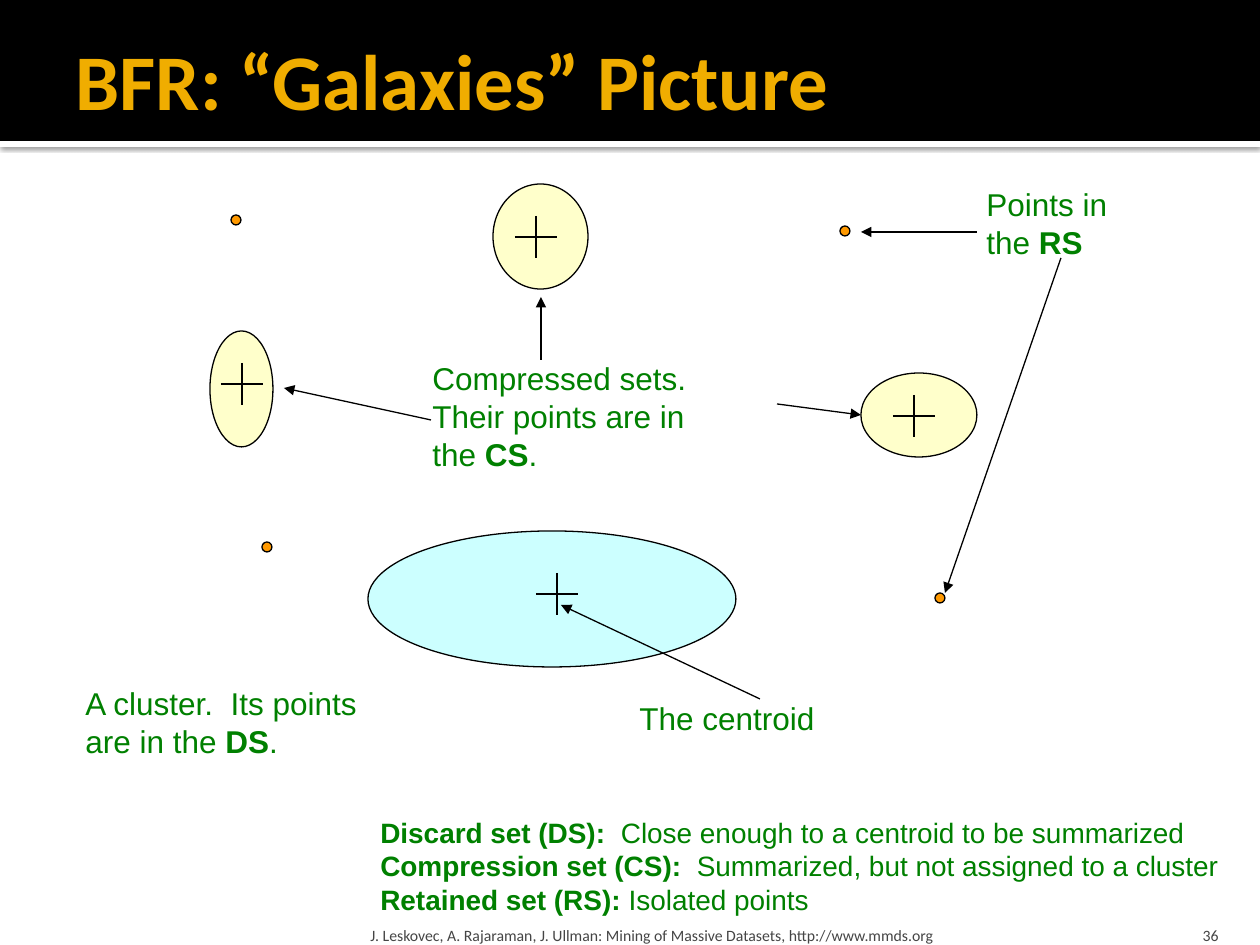
from lxml.etree import SubElement
from pptx import Presentation
from pptx.dml.color import RGBColor
from pptx.enum.shapes import MSO_CONNECTOR, MSO_SHAPE
from pptx.enum.text import MSO_ANCHOR, MSO_AUTO_SIZE, PP_ALIGN
from pptx.oxml.ns import qn
from pptx.util import Pt

PX = 914400 // 126
COLORS = {
    "black": "000000", "white": "FFFFFF", "gold": "F0AD00",
    "gray": "454545", "green": "008000", "cyan": "CCFFFF",
    "yellow": "FFFF99", "orange": "FF9900",
}


def color(name):
    return RGBColor.from_string(COLORS[name])


def scale(*sizes):
    return [size * PX for size in sizes]


def shape(slide, kind, box, fill, line="black", alpha=None):
    item = slide.shapes.add_shape(kind, *scale(*box))
    item.shadow.inherit = False
    item.fill.solid()
    item.fill.fore_color.rgb = color(fill)
    if alpha:
        tint = item.element.spPr.find(".//" + qn("a:srgbClr"))
        SubElement(tint, qn("a:alpha"), val=str(alpha * 1000))
    if line:
        item.line.color.rgb = color(line)
        item.line.width = Pt(0.75)
    else:
        item.line.fill.background()
    return item


def oval(slide, box, fill, alpha=None):
    return shape(slide, MSO_SHAPE.OVAL, box, fill, alpha=alpha)


def line(slide, x1, y1, x2, y2, arrow=False):
    item = slide.shapes.add_connector(
        MSO_CONNECTOR.STRAIGHT, *scale(x1, y1, x2, y2))
    item.line.color.rgb = color("black")
    item.line.width = Pt(0.75)
    if arrow:
        SubElement(item.line._get_or_add_ln(), qn("a:tailEnd"),
                   type="triangle")
    SubElement(item.element.spPr, qn("a:effectLst"))


def cross(slide, x, y, half=21):
    line(slide, x, y - half, x, y + half)
    line(slide, x - half, y, x + half, y)


def label(slide, box, text, size=18, wrap=False):
    """Add green text in which asterisks enclose bold words."""
    frame = slide.shapes.add_textbox(*scale(*box)).text_frame
    frame.word_wrap = wrap
    frame.text = text.replace("*", "")
    for part, row in zip(frame.paragraphs, text.split("\n")):
        part.clear()
        for i, words in enumerate(row.split("*")):
            if words:
                run = part.add_run()
                run.text = words
                style(run.font, "Arial", size, "green", i % 2 == 1)


def style(font, name, size, tone, bold=False):
    font.name = name
    font.size = Pt(size)
    font.color.rgb = color(tone)
    font.bold = bold


def header(slide, x, y, w, h):
    rule = shape(slide, MSO_SHAPE.RECTANGLE, (x, y + h, w, 6), "white", None)
    glow = SubElement(rule.element.spPr.find(qn("a:effectLst")),
                      qn("a:outerShdw"), blurRad=str(Pt(2.5)),
                      dist=str(Pt(0.8)), dir="5400000", rotWithShape="0")
    tint = SubElement(glow, qn("a:srgbClr"), val=COLORS["black"])
    SubElement(tint, qn("a:alpha"), val="60000")
    shape(slide, MSO_SHAPE.RECTANGLE, (x, y, w, h), "black", None)

    title = slide.shapes.title
    slide.shapes.element.append(title.element)
    title.left, title.top, title.width, title.height = scale(
        x + 63, y + 21, w - 126, 116)
    frame = title.text_frame
    frame.text = "BFR: “Galaxies” Picture"
    frame.auto_size = MSO_AUTO_SIZE.NONE
    frame.vertical_anchor = MSO_ANCHOR.MIDDLE
    frame.margin_right = Pt(3.6)
    part = frame.paragraphs[0]
    part.alignment = PP_ALIGN.LEFT
    style(part.runs[0].font, "Calibri", 45, "gold", True)


def footer(slide, x, y, h):
    credit = ("J. Leskovec, A. Rajaraman, J. Ullman: "
              "Mining of Massive Datasets, http://www.mmds.org")
    for left, w, text, side, gap in (
            (x, 759, credit, PP_ALIGN.LEFT, 3.6),
            (x + 766, 101, "36", PP_ALIGN.RIGHT, 7.2)):
        frame = slide.shapes.add_textbox(*scale(left, y, w, h)).text_frame
        frame.word_wrap = True
        frame.vertical_anchor = MSO_ANCHOR.BOTTOM
        frame.margin_left = frame.margin_right = Pt(gap)
        frame.margin_bottom = 0
        frame.text = text
        part = frame.paragraphs[0]
        part.alignment = side
        style(part.runs[0].font, "Calibri", 9, "gray")


def discard(slide, x, y):
    oval(slide, (x + 295, y, 368, 136), "cyan")
    label(slide, (x, y + 147, 300, 89),
          "A cluster.  Its points\nare in the *DS*.")
    cross(slide, x + 484, y + 63)
    label(slide, (x + 554, y + 162, 202, 50), "The centroid")
    line(slide, x + 687, y + 168, x + 488, y + 74, True)


def compress(slide, x, y):
    for dx, dy, w, h in ((0, 147, 63, 116), (651, 189, 116, 84),
                         (283, 0, 95, 105)):
        oval(slide, (x + dx, y + dy, w, h), "yellow", 50)
    for dx, dy in ((32, 200), (704, 232), (326, 53)):
        cross(slide, x + dx, y + dy)
    label(slide, (x + 210, y + 169, 282, 127),
          "Compressed sets.\nTheir points are in\nthe *CS*.")
    for x1, y1, x2, y2 in ((221, 236, 74, 204), (331, 176, 331, 113),
                           (567, 220, 651, 231)):
        line(slide, x + x1, y + y1, x + x2, y + y2, True)


def retain(slide, x, y):
    for dx, dy in ((0, 36), (31, 363), (704, 414), (609, 47)):
        oval(slide, (x + dx, y + dy, 10, 10), "orange")
    label(slide, (x + 743, y, 147, 89), "Points in\nthe *RS*")
    for x1, y1, x2, y2 in ((746, 53, 630, 53), (830, 79, 714, 414)):
        line(slide, x + x1, y + y1, x + x2, y + y2, True)


def legend(slide, *box):
    label(slide, box,
          "*Discard set (DS):*  Close enough to a centroid to be summarized\n"
          "*Compression set (CS):*  Summarized, but not assigned to a cluster\n"
          "*Retained set (RS):* Isolated points", 16, True)


def main():
    deck = Presentation()
    deck.slide_width, deck.slide_height = scale(1260, 945)
    slide = deck.slides.add_slide(deck.slide_layouts[5])
    header(slide, 0, 0, 1260, 141)
    footer(slide, 364, 907, 38)
    discard(slide, 73, 531)
    compress(slide, 210, 184)
    retain(slide, 231, 179)
    legend(slide, 368, 809, 882, 115)
    deck.save("out.pptx")


if __name__ == "__main__":
    main()
